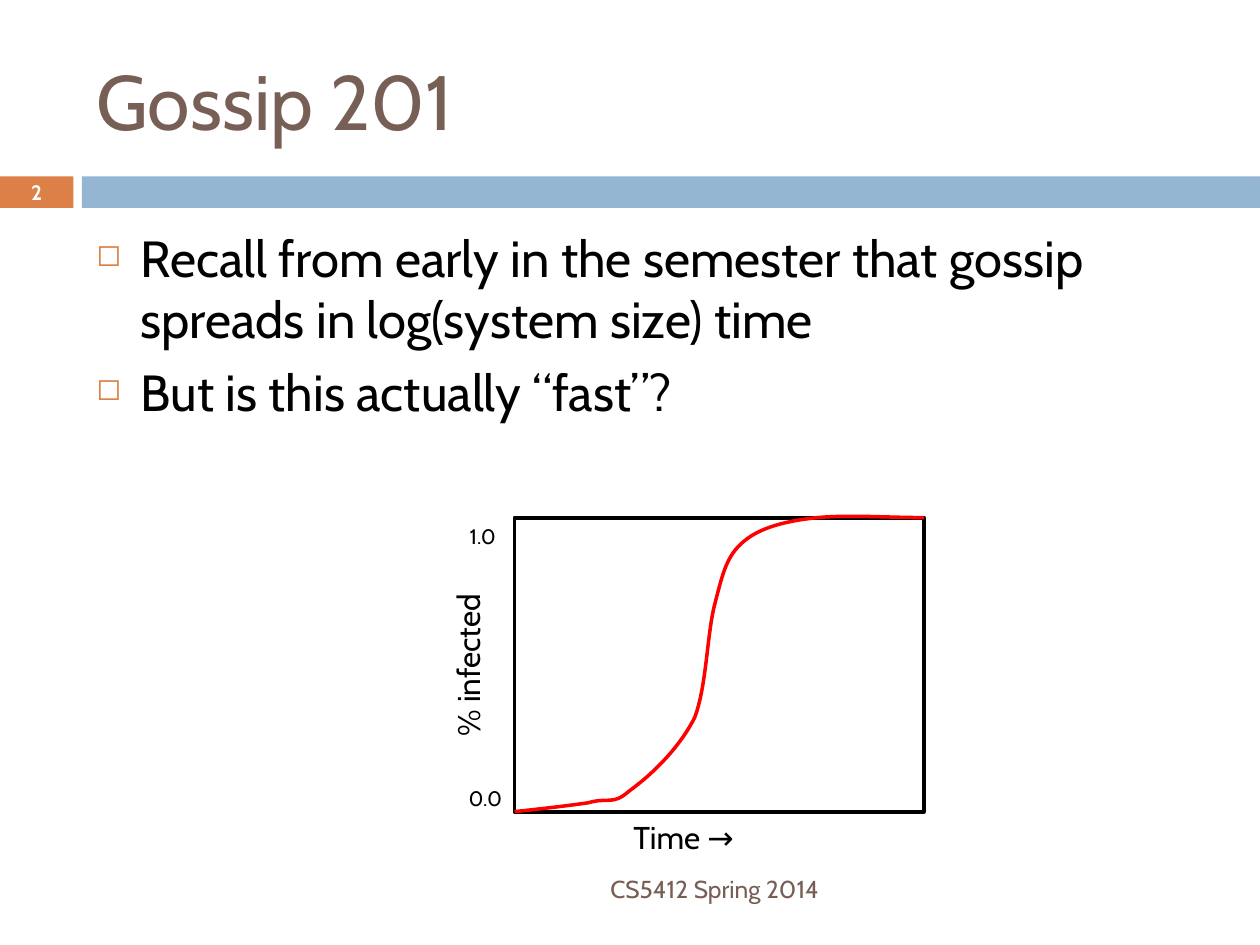
from dataclasses import dataclass

from lxml.etree import SubElement
from pptx import Presentation
from pptx.dml.color import RGBColor
from pptx.enum.shapes import MSO_SHAPE
from pptx.enum.text import MSO_ANCHOR, PP_ALIGN
from pptx.oxml.ns import qn
from pptx.util import Inches, Pt

COLORS = {
    "brown": "775F55",
    "orange": "DD8047",
    "blue": "94B6D2",
    "black": "000000",
    "white": "FFFFFF",
    "red": "FF0000",
}
FONT = "Cabin"
COLUMNS, ROWS = 120, 90
BULLETS = [
    "Recall from early in the semester that gossip spreads in log(system size) time",
    "But is this actually “fast”?",
]
INFECTION_START = (0, 1)
INFECTION_CURVES = [
    [(0.07, 0.99), (0.13, 0.98), (0.18, 0.97)],
    [(0.23, 0.95), (0.24, 0.98), (0.28, 0.93)],
    [(0.33, 0.88), (0.4, 0.79), (0.44, 0.68)],
    [(0.47, 0.57), (0.47, 0.39), (0.49, 0.29)],
    [(0.51, 0.18), (0.52, 0.12), (0.57, 0.07)],
    [(0.61, 0.03), (0.67, 0.01), (0.74, 0)],
    [(0.82, -0.01), (0.91, 0), (1, 0)],
]


@dataclass
class Box:
    """A rectangle in EMU."""

    left: int
    top: int
    width: int
    height: int

    def point(self, x, y):
        """Return the point at the given shares of the box."""
        return int(self.left + x * self.width), int(self.top + y * self.height)

    def share(self, x, y, width, height):
        """Return an inner box given in shares of this one."""
        return Box(*self.point(x, y), int(width * self.width), int(height * self.height))

    def cells(self, column, row, columns, rows):
        """Return an inner box given in grid columns and rows."""
        return self.share(column / COLUMNS, row / ROWS, columns / COLUMNS, rows / ROWS)

    def bounds(self):
        """Return left, top, width and height."""
        return self.left, self.top, self.width, self.height


def color(name):
    """Return a named colour."""
    return RGBColor.from_string(COLORS[name])


def write(shape, lines, size, color_name, align=PP_ALIGN.LEFT,
          anchor=MSO_ANCHOR.TOP, bold=False, wrap=True):
    """Fill a shape with formatted paragraphs."""
    frame = shape.text_frame
    frame.text = "\n".join(lines)
    frame.word_wrap = wrap
    frame.vertical_anchor = anchor
    for paragraph in frame.paragraphs:
        paragraph.alignment = align
        for run in paragraph.runs:
            run.font.name = FONT
            run.font.size = Pt(size)
            run.font.bold = bold
            run.font.color.rgb = color(color_name)


def add_text(slide, box, text, size, color_name, **style):
    """Add a one-line text box."""
    shape = slide.shapes.add_textbox(*box.bounds())
    write(shape, [text], size, color_name, **style)
    return shape


def add_rectangle(slide, box, fill, line=None):
    """Add a flat rectangle with an optional outline."""
    shape = slide.shapes.add_shape(MSO_SHAPE.RECTANGLE, *box.bounds())
    shape.shadow.inherit = False
    shape.fill.solid()
    shape.fill.fore_color.rgb = color(fill)
    if line:
        shape.line.color.rgb = color(line)
        shape.line.width = Pt(2.25)
    else:
        shape.line.fill.background()


def add_title(slide, box):
    """Place and format the title placeholder."""
    title = slide.shapes.title
    title.left, title.top, title.width, title.height = box.bounds()
    write(title, ["Gossip 201"], 44, "brown", anchor=MSO_ANCHOR.MIDDLE)


def add_band(slide, box):
    """Add the coloured band with the slide number."""
    number_box = box.share(0, 0, 7 / COLUMNS, 1)
    add_rectangle(slide, number_box, "orange")
    add_rectangle(slide, box.share(0.065, 0, 0.935, 1), "blue")
    add_text(slide, number_box, "2", 11.9, "white", align=PP_ALIGN.CENTER,
             anchor=MSO_ANCHOR.MIDDLE, bold=True)


def add_bullets(slide, box):
    """Add the bulleted body text."""
    body = slide.shapes.add_textbox(*box.bounds())
    write(body, BULLETS, 29, "black")
    for paragraph in body.text_frame.paragraphs:
        paragraph.space_before = Pt(7)
        properties = paragraph._p.get_or_add_pPr()
        properties.set("marL", str(Inches(0.35)))
        properties.set("indent", str(-Inches(0.35)))
        bullet_color = SubElement(properties, qn("a:buClr"))
        SubElement(bullet_color, qn("a:srgbClr"), val=COLORS["orange"])
        SubElement(properties, qn("a:buSzPct"), val="60000")
        SubElement(properties, qn("a:buChar"), char="◻")


def add_infection_curve(slide, box):
    """Draw the infection curve as joined cubic Bézier segments."""
    builder = slide.shapes.build_freeform(*box.point(*INFECTION_START))
    points = [box.point(*point) for curve in INFECTION_CURVES for point in curve]
    builder.add_line_segments(points, close=False)
    shape = builder.convert_to_shape()
    shape.shadow.inherit = False
    shape.fill.background()
    shape.line.color.rgb = color("red")
    shape.line.width = Pt(2)
    outline = next(shape._element.iter(qn("a:path")))
    segments = outline.findall(qn("a:lnTo"))
    for start in range(0, len(segments), 3):
        curve = SubElement(outline, qn("a:cubicBezTo"))
        for segment in segments[start:start + 3]:
            curve.append(segment[0])
            outline.remove(segment)


def add_infection_plot(slide, box):
    """Add the plot frame, its curve and the axis labels."""
    add_rectangle(slide, box, "white", "black")
    add_infection_curve(slide, box)
    axis = add_text(slide, box.share(-0.36, 0.36, 0.49, 0.17), "% infected", 18, "black")
    axis.rotation = 270
    add_text(slide, box.share(-0.18, 0.89, 0.18, 0.13), "0.0", 12, "black",
             align=PP_ALIGN.RIGHT)
    add_text(slide, box.share(-0.14, 0, 0.13, 0.13), "1.0", 12, "black", wrap=False)
    add_text(slide, box.share(0.26, 1, 0.56, 0.17), "Time →", 18, "black")


def add_footer(slide, box):
    """Add the course footer."""
    add_text(slide, box, "CS5412 Spring 2014", 14, "brown", align=PP_ALIGN.RIGHT,
             anchor=MSO_ANCHOR.MIDDLE)


def main():
    """Build and save the slide."""
    presentation = Presentation()
    presentation.slide_width, presentation.slide_height = Inches(10), Inches(7.5)
    slide = presentation.slides.add_slide(presentation.slide_layouts[5])
    page = Box(0, 0, presentation.slide_width, presentation.slide_height)
    add_band(slide, page.cells(0, 16.8, COLUMNS, 3))
    add_title(slide, page.cells(8, 3, 107, 13))
    add_bullets(slide, page.cells(8, 21, 107, 59))
    add_infection_plot(slide, page.cells(49, 49.3, 39, 28))
    add_footer(slide, page.cells(8, 82.2, 71.2, 4.8))
    presentation.save("out.pptx")


if __name__ == "__main__":
    main()
